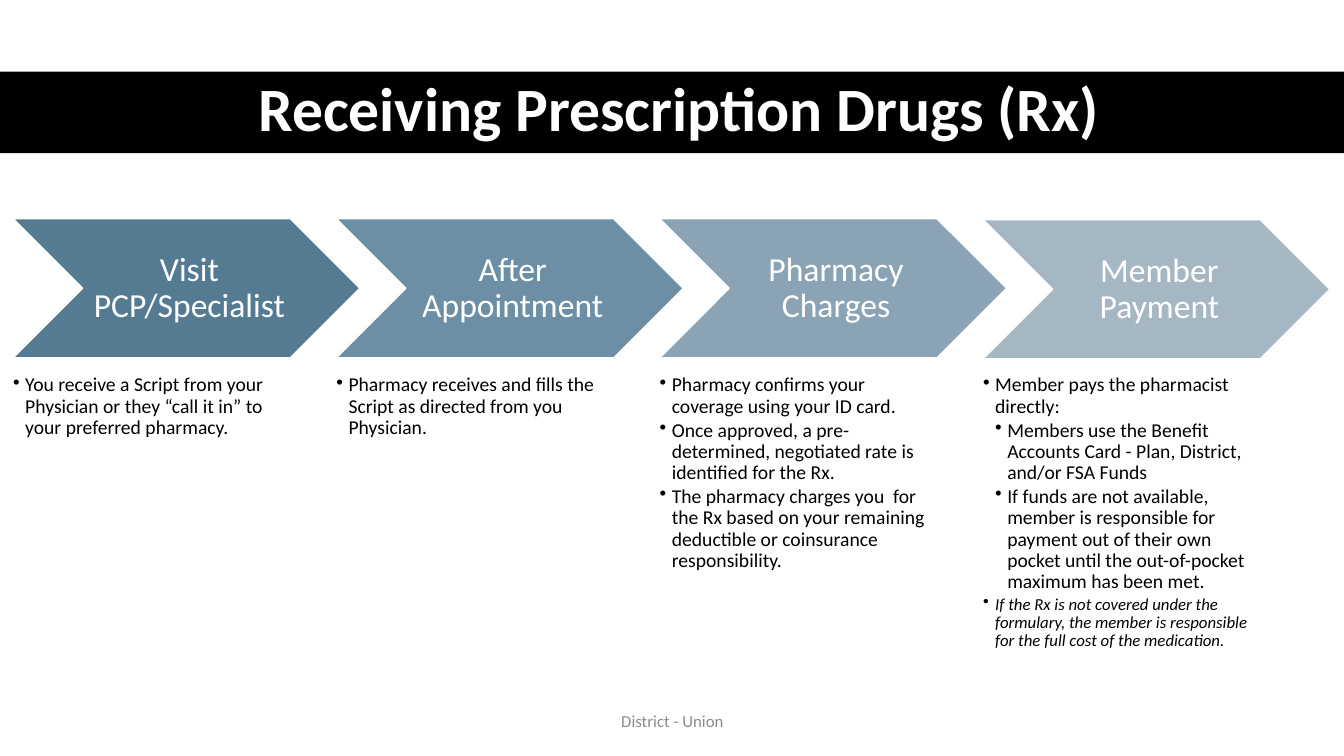
from dataclasses import dataclass

from lxml.etree import SubElement
from pptx import Presentation
from pptx.dml.color import RGBColor
from pptx.enum.shapes import MSO_SHAPE
from pptx.enum.text import MSO_ANCHOR, PP_ALIGN
from pptx.oxml.ns import qn
from pptx.slide import Slide
from pptx.text.text import TextFrame, _Paragraph
from pptx.util import Inches, Pt

BLACK = RGBColor(0x00, 0x00, 0x00)
WHITE = RGBColor(0xFF, 0xFF, 0xFF)
GRAY = RGBColor(0x8C, 0x8C, 0x8C)
DEEP_BLUE = RGBColor(0x54, 0x7B, 0x92)
MID_BLUE = RGBColor(0x6C, 0x8F, 0xA6)
SOFT_BLUE = RGBColor(0x8A, 0xA3, 0xB5)
PALE_BLUE = RGBColor(0xA6, 0xB7, 0xC4)

FONT = "Calibri"
FIRST_LEFT, LAST_LEFT = 0.13, 9.75
CHEVRON_WIDTH, CHEVRON_HEIGHT = 3.44, 1.38
DETAILS_TOP, DETAILS_WIDTH, DETAILS_HEIGHT = 3.72, 2.75, 2.82
BULLET_INDENT = 0.12


@dataclass(frozen=True)
class Detail:
    text: str
    level: int = 1
    size: int = 14
    italic: bool = False


@dataclass(frozen=True)
class Step:
    title: str
    color: RGBColor
    details: tuple[Detail, ...]
    top: float = 2.17


STEPS = (
    Step("Visit PCP/Specialist", DEEP_BLUE, (
        Detail("You receive a Script from your Physician or they “call it in” "
               "to your preferred pharmacy."),
    )),
    Step("After Appointment", MID_BLUE, (
        Detail("Pharmacy receives and fills the Script as directed from you Physician."),
    )),
    Step("Pharmacy Charges", SOFT_BLUE, (
        Detail("Pharmacy confirms your coverage using your ID card."),
        Detail("Once approved, a pre-determined, negotiated rate is identified for the Rx."),
        Detail("The pharmacy charges you  for the Rx based on your remaining "
               "deductible or coinsurance responsibility."),
    )),
    Step("Member Payment", PALE_BLUE, (
        Detail("Member pays the pharmacist directly:"),
        Detail("Members use the Benefit Accounts Card - Plan, District, and/or FSA Funds", level=2),
        Detail("If funds are not available, member is responsible for payment out of "
               "their own pocket until the out-of-pocket maximum has been met.", level=2),
        Detail("If the Rx is not covered under the formulary, the member is responsible "
               "for the full cost of the medication.", size=12, italic=True),
    ), top=2.18),
)


def write(paragraph: _Paragraph, text: str, size: int, color: RGBColor, **formats: bool) -> None:
    run = paragraph.add_run()
    run.text = text
    run.font.color.rgb = color
    for attribute, value in {"name": FONT, "size": Pt(size), **formats}.items():
        setattr(run.font, attribute, value)


def set_frame(frame: TextFrame, left: float, top: float, right: float, bottom: float,
              anchor: MSO_ANCHOR = MSO_ANCHOR.MIDDLE) -> None:
    formats = {
        "word_wrap": True,
        "vertical_anchor": anchor,
        "margin_left": Inches(left),
        "margin_top": Inches(top),
        "margin_right": Inches(right),
        "margin_bottom": Inches(bottom),
    }
    for attribute, value in formats.items():
        setattr(frame, attribute, value)


def add_bullet(paragraph: _Paragraph, level: int) -> None:
    properties = paragraph._p.get_or_add_pPr()
    properties.set("marL", str(Inches(BULLET_INDENT * level)))
    properties.set("indent", str(-Inches(BULLET_INDENT)))
    SubElement(properties, qn("a:buChar"), char="•")


def add_band(slide: Slide) -> None:
    band = slide.shapes.add_shape(MSO_SHAPE.RECTANGLE, 0, Inches(0.71), Inches(13.33), Inches(0.81))
    band.shadow.inherit = False
    band.fill.solid()
    band.fill.fore_color.rgb = BLACK
    band.line.fill.background()


def add_caption(slide: Slide, text: str, box: tuple[float, float, float, float],
                size: int, color: RGBColor, spacing: float = 1.0, bold: bool = False) -> None:
    caption = slide.shapes.add_textbox(*(Inches(length) for length in box))
    set_frame(caption.text_frame, 0.1, 0.05, 0.1, 0.05)
    paragraph = caption.text_frame.paragraphs[0]
    paragraph.alignment = PP_ALIGN.CENTER
    paragraph.line_spacing = spacing
    write(paragraph, text, size, color, bold=bold)


def add_chevron(slide: Slide, step: Step, left: float) -> None:
    chevron = slide.shapes.add_shape(MSO_SHAPE.CHEVRON, Inches(left), Inches(step.top),
                                     Inches(CHEVRON_WIDTH), Inches(CHEVRON_HEIGHT))
    chevron.shadow.inherit = False
    chevron.fill.solid()
    chevron.fill.fore_color.rgb = step.color
    chevron.line.color.rgb = WHITE
    chevron.line.width = Pt(1)
    set_frame(chevron.text_frame, 0.1, 0.04, 0.04, 0.04)
    paragraph = chevron.text_frame.paragraphs[0]
    paragraph.alignment = PP_ALIGN.CENTER
    paragraph.line_spacing = 0.9
    write(paragraph, step.title, 24, WHITE)


def add_details(slide: Slide, details: tuple[Detail, ...], left: float) -> None:
    frame = slide.shapes.add_textbox(Inches(left), Inches(DETAILS_TOP), Inches(DETAILS_WIDTH),
                                     Inches(DETAILS_HEIGHT)).text_frame
    set_frame(frame, 0, 0, 0, 0, MSO_ANCHOR.TOP)
    for index, detail in enumerate(details):
        paragraph = frame.add_paragraph() if index else frame.paragraphs[0]
        paragraph.level = detail.level
        paragraph.line_spacing = 0.9
        paragraph.space_after = Pt(0.15 * detail.size)
        add_bullet(paragraph, detail.level)
        write(paragraph, detail.text, detail.size, BLACK, italic=detail.italic)


def main() -> None:
    presentation = Presentation()
    presentation.slide_width = Inches(13.33)
    presentation.slide_height = Inches(7.5)
    slide = presentation.slides.add_slide(presentation.slide_layouts[6])

    # Title band
    add_band(slide)
    add_caption(slide, "Receiving Prescription Drugs (Rx)", (0.61, 0.7, 12.26, 0.81),
                44, WHITE, spacing=0.9, bold=True)

    # Process steps, evenly spaced
    pitch = (LAST_LEFT - FIRST_LEFT) / (len(STEPS) - 1)
    for index, step in enumerate(STEPS):
        left = FIRST_LEFT + index * pitch
        add_chevron(slide, step, left)
        add_details(slide, step.details, left)

    # Footer
    add_caption(slide, "District - Union", (4.42, 6.95, 4.5, 0.4), 12, GRAY)

    presentation.save("out.pptx")


if __name__ == "__main__":
    main()
